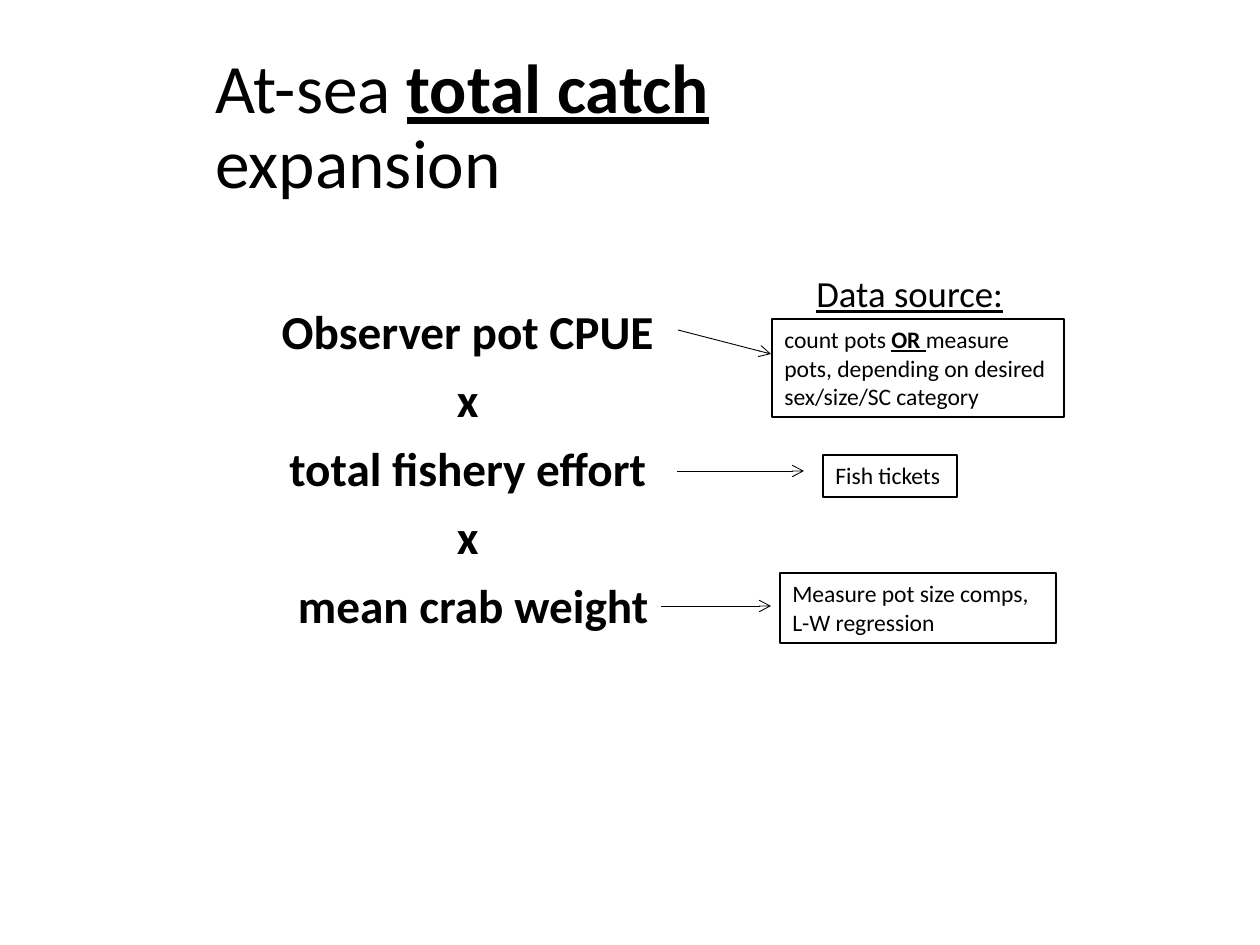
import pptx
import pptx.dml.color
import pptx.enum.shapes
import pptx.enum.text
import pptx.oxml.ns
import pptx.util
from lxml import etree

PX = 914400 / 126
BLACK = "000000"
ALIGN = pptx.enum.text.PP_ALIGN
ANCHOR = pptx.enum.text.MSO_ANCHOR


def emu(*lengths):
    """Turn px lengths into EMU."""
    return [pptx.util.Emu(round(n * PX)) for n in lengths]


def rgb(color):
    """Return the colour for a hex string."""
    return pptx.dml.color.RGBColor.from_string(color)


def write(p, runs, size, align=ALIGN.LEFT, bold=None, underline=None):
    """Fill a paragraph with (text, emphasised) runs, emphasis being bold underline."""
    p.alignment = align
    font = p.font
    font.name, font.size = "Calibri", pptx.util.Pt(size)
    font.bold, font.underline = bold, underline
    font.color.rgb = rgb(BLACK)
    for text, emphasised in runs:
        r = p.add_run()
        r.text = text
        if emphasised:
            r.font.bold = r.font.underline = True


def add_title(s, box, runs):
    """Place and format the title placeholder."""
    sp = s.shapes.title
    sp.left, sp.top, sp.width, sp.height = emu(*box)
    tf = sp.text_frame
    tf.word_wrap = True
    tf.auto_size = pptx.enum.text.MSO_AUTO_SIZE.NONE
    tf.vertical_anchor = ANCHOR.MIDDLE
    p = tf.paragraphs[0]
    write(p, runs, 39.6)
    p.line_spacing = 0.9


def add_formula(s, box, terms):
    """Stack the factors of the formula in one centred text box."""
    tf = s.shapes.add_textbox(*emu(*box)).text_frame
    tf.word_wrap = True
    for i, term in enumerate(terms):
        p = tf.add_paragraph() if i else tf.paragraphs[0]
        write(p, [(term, False)], 27, ALIGN.CENTER, bold=True)
        p.line_spacing = 0.9
        p.space_before = pptx.util.Pt(10)


def add_heading(s, box, text):
    """Add the underlined heading over the sources."""
    tf = s.shapes.add_textbox(*emu(*box)).text_frame
    tf.word_wrap = True
    write(tf.paragraphs[0], [(text, False)], 21, underline=True)


def add_source(s, box, runs):
    """Add one outlined data source box."""
    sp = s.shapes.add_shape(pptx.enum.shapes.MSO_SHAPE.RECTANGLE, *emu(*box))
    sp.shadow.inherit = False
    sp.fill.background()
    sp.line.color.rgb = rgb(BLACK)
    sp.line.width = pptx.util.Pt(0.75)
    tf = sp.text_frame
    tf.word_wrap = True
    tf.vertical_anchor = ANCHOR.TOP
    write(tf.paragraphs[0], runs, 13.5)


def add_arrow(s, ends):
    """Draw a thin line with an open arrowhead at its end."""
    kind = pptx.enum.shapes.MSO_CONNECTOR.STRAIGHT
    sp = s.shapes.add_connector(kind, *emu(*ends))
    sp.line.color.rgb = rgb(BLACK)
    sp.line.width = pptx.util.Pt(0.5)
    qn = pptx.oxml.ns.qn
    etree.SubElement(sp.line._get_or_add_ln(), qn("a:tailEnd"), type="arrow")
    etree.SubElement(sp._element.spPr, qn("a:effectLst"))


def main():
    """Build and save the slide."""
    prs = pptx.Presentation()
    prs.slide_width, prs.slide_height = emu(1260, 945)
    s = prs.slides.add_slide(prs.slide_layouts[5])
    add_title(s, (203, 60, 815, 137),
              [("At-sea ", False), ("total catch ", True), ("expansion", False)])
    add_formula(s, (174, 302, 598, 391),
                ["Observer pot CPUE ", "x ", "total fishery effort ", "x ",
                 "mean crab weight"])
    add_heading(s, (804, 265, 300, 57), "Data source:")
    sources = [
        ((772, 319, 292, 98), (678, 330, 771, 354),
         [("count pots ", False), ("OR ", True),
          ("measure pots, depending on desired sex/size/SC category", False)]),
        ((823, 455, 134, 42), (677, 471, 804, 471), [("Fish tickets", False)]),
        ((780, 573, 276, 70), (661, 606, 771, 606),
         [("Measure pot size comps, L-W regression", False)]),
    ]
    for box, ends, runs in sources:
        add_source(s, box, runs)
        add_arrow(s, ends)
    prs.save("out.pptx")


if __name__ == "__main__":
    main()
